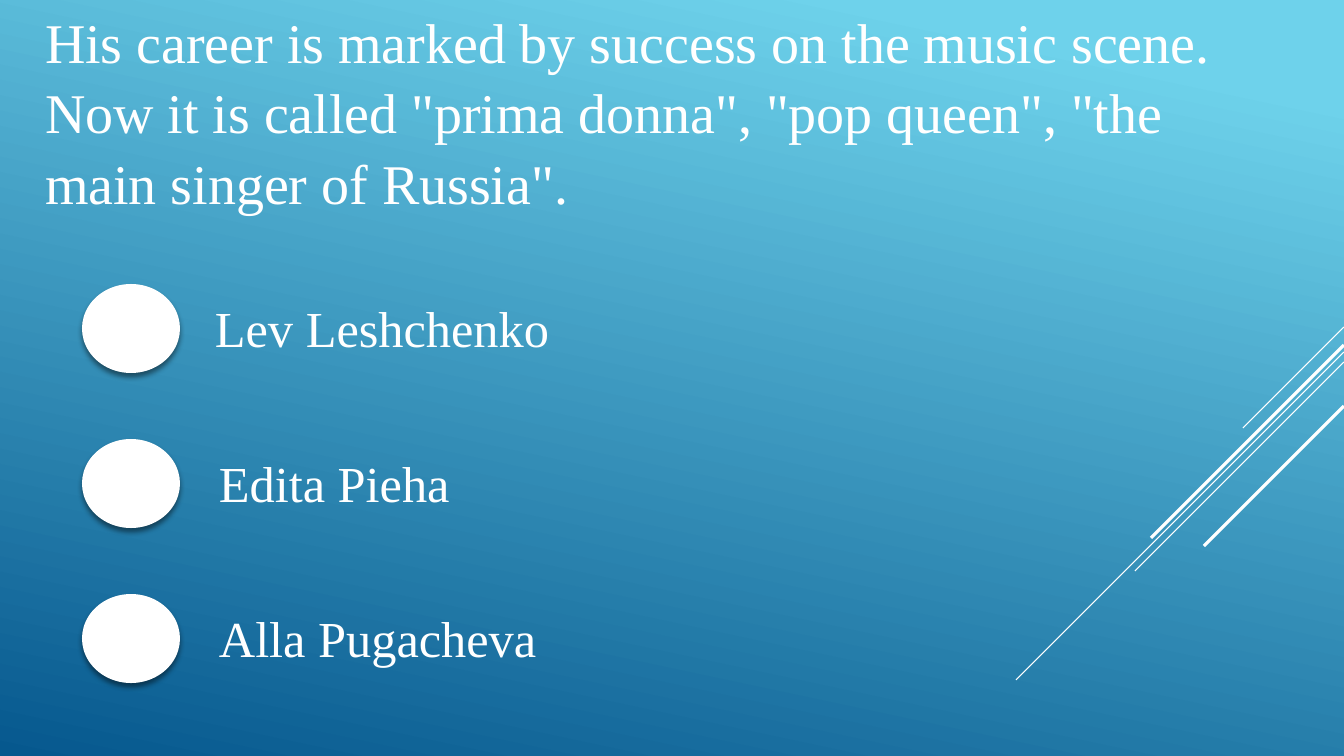
from dataclasses import dataclass

import lxml.etree
import pptx
import pptx.dml.color
import pptx.enum.shapes
import pptx.enum.text
import pptx.oxml
import pptx.oxml.ns
import pptx.util

EMU_PER_PX = 914400 / 100.8
SLIDE_W, SLIDE_H = 1344, 756


@dataclass(frozen=True)
class Theme:
    font: str = "Times New Roman"
    white: str = "FFFFFF"
    sky: str = "6ED2EB"
    deep: str = "06588E"
    shadow: str = "000000"
    question_pt: int = 40
    answer_pt: int = 36
    thin_pt: float = 0.75
    thick_pt: float = 2.25


THEME = Theme()
QUESTION = (
    "His career is marked by success on the music scene. "
    'Now it is called "prima donna", "pop queen", "the main singer of Russia".'
)
ANSWERS = [("Lev Leshchenko", 123), ("Edita Pieha", 127), ("Alla Pugacheva", 127)]
RAYS = [
    (0, 101, THEME.thin_pt),
    (25, 328, THEME.thin_pt),
    (35, 209, THEME.thin_pt),
    (18, 193, THEME.thick_pt),
    (79, 140, THEME.thick_pt),
]


def px(*values):
    return [pptx.util.Emu(round(v * EMU_PER_PX)) for v in values]


def rgb(value):
    return pptx.dml.color.RGBColor.from_string(value)


def write(tf, text, size):
    tf.word_wrap = True
    p = tf.paragraphs[0]
    p.text = text
    p.alignment = pptx.enum.text.PP_ALIGN.LEFT
    p.font.name = THEME.font
    p.font.size = pptx.util.Pt(size)
    p.font.color.rgb = rgb(THEME.white)
    return p


def add_effects(sp, content=""):
    ns = pptx.oxml.ns.nsdecls("a")
    xml = f"<a:effectLst {ns}>{content}</a:effectLst>"
    sp._element.spPr.append(pptx.oxml.parse_xml(xml))


def paint_background(s):
    fill = s.background.fill
    fill.gradient()
    fill.gradient_angle = 360 - 102
    stops = [(0.1, THEME.sky), (1, THEME.deep)]
    for stop, (position, color) in zip(fill.gradient_stops, stops):
        stop.position = position
        stop.color.rgb = rgb(color)


def add_rays(s, right, top):
    for drop, length, weight in RAYS:
        y = top + drop
        ray = s.shapes.add_connector(
            pptx.enum.shapes.MSO_CONNECTOR.STRAIGHT,
            *px(right, y, right - length, y + length),
        )
        ray.line.color.rgb = rgb(THEME.white)
        ray.line.width = pptx.util.Pt(weight)
        add_effects(ray)


def add_question(s, left, top, width, height):
    title = s.shapes.title
    title.left, title.top, title.width, title.height = px(left, top, width, height)
    tf = title.text_frame
    tf.auto_size = pptx.enum.text.MSO_AUTO_SIZE.NONE
    tf.vertical_anchor = pptx.enum.text.MSO_ANCHOR.MIDDLE
    p = write(tf, QUESTION, THEME.question_pt)
    p.line_spacing = 1.05
    p.space_before = pptx.util.Pt(0)


def add_bullet(s, left, top):
    sp = s.shapes.add_shape(
        pptx.enum.shapes.MSO_SHAPE.OVAL, *px(left, top, 98, 89)
    )
    sp.fill.solid()
    sp.fill.fore_color.rgb = rgb(THEME.white)
    sp.line.fill.background()
    blur, distance = pptx.util.Pt(4), pptx.util.Pt(3)
    add_effects(
        sp,
        f'<a:outerShdw blurRad="{blur}" dist="{distance}" dir="5400000" rotWithShape="0">'
        f'<a:srgbClr val="{THEME.shadow}"><a:alpha val="46000"/></a:srgbClr>'
        "</a:outerShdw>",
    )


def add_answers(s, left, top, width, pitch):
    for row, (answer, indent) in enumerate(ANSWERS):
        y = top + row * pitch
        add_bullet(s, left, y)
        box = s.shapes.add_textbox(*px(left + indent, y + 8, width - indent, 71))
        write(box.text_frame, answer, THEME.answer_pt)


def build_quiz_slide(prs):
    s = prs.slides.add_slide(prs.slide_layouts[5])
    paint_background(s)
    add_rays(s, SLIDE_W, 327)
    add_question(s, 35, 0, 1252, 219)
    add_answers(s, 82, 284, 500, 155)


def main():
    prs = pptx.Presentation()
    prs.slide_width, prs.slide_height = px(SLIDE_W, SLIDE_H)
    build_quiz_slide(prs)
    prs.save("out.pptx")


if __name__ == "__main__":
    main()
